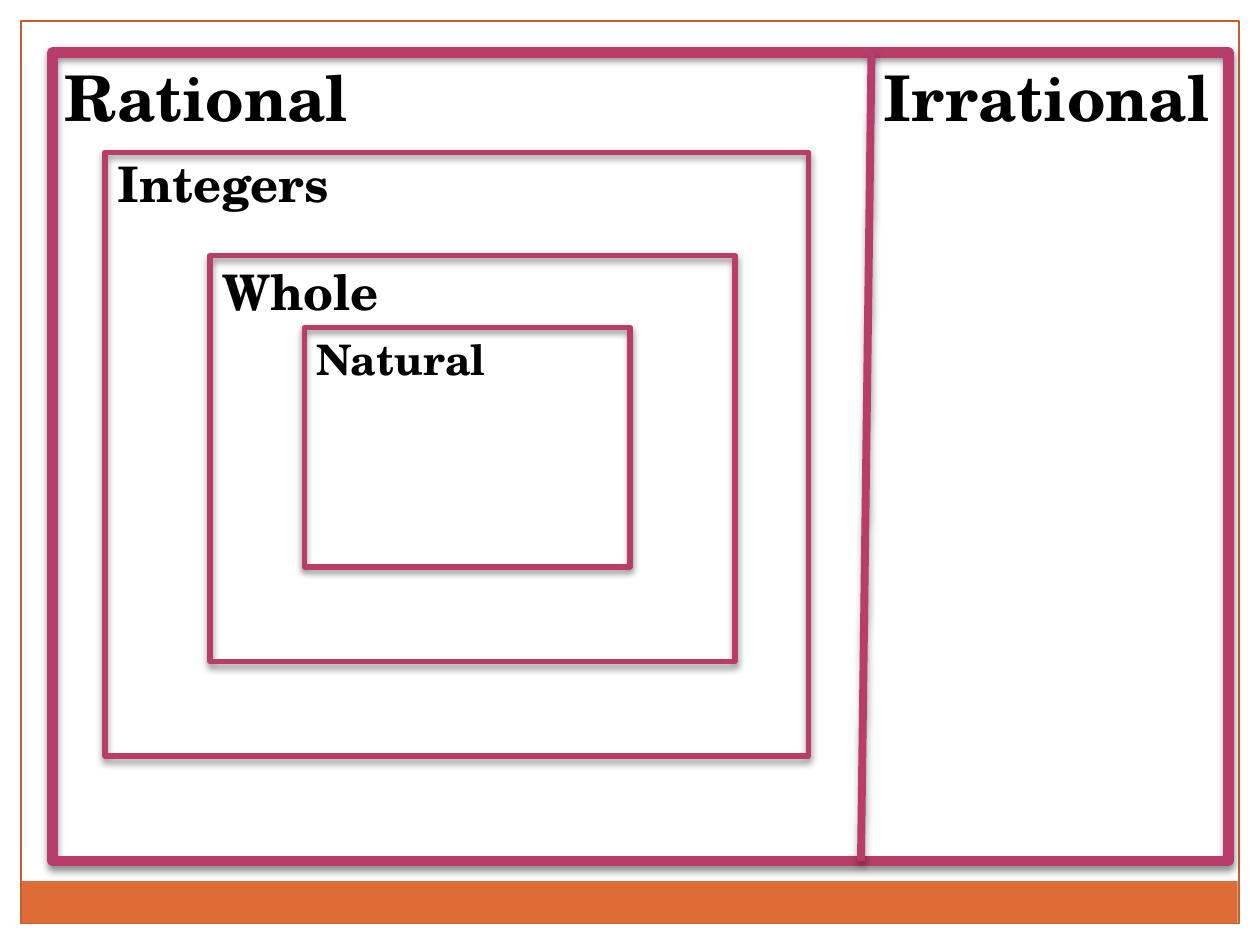
from lxml import etree
from pptx import Presentation
from pptx.dml.color import RGBColor
from pptx.enum.shapes import MSO_CONNECTOR, MSO_SHAPE
from pptx.enum.text import MSO_AUTO_SIZE
from pptx.oxml.ns import qn
from pptx.util import Pt

RECT = MSO_SHAPE.RECTANGLE
STRAIGHT = MSO_CONNECTOR.STRAIGHT
GROW = MSO_AUTO_SIZE.SHAPE_TO_FIT_TEXT

FONT = "TeX Gyre Schola"
COLORS = {"band": "DE6C36", "border": "C45F30", "set": "B83D68",
          "text": "000000", "shadow": "000000"}


def style_line(sp, color, width):
    sp.line.color.rgb = RGBColor.from_string(COLORS[color])
    sp.line.width = Pt(width)


def add_shadow(sp, opacity):
    """Give sp a soft shadow straight below it, opacity in percent."""
    effects = sp._element.spPr.find(qn("a:effectLst"))
    if effects is None:
        effects = etree.SubElement(sp._element.spPr, qn("a:effectLst"))
    shadow = etree.SubElement(effects, qn("a:outerShdw"), blurRad=str(Pt(4)),
                              dist=str(Pt(2)), dir="5400000", rotWithShape="0")
    color = etree.SubElement(shadow, qn("a:srgbClr"), val=COLORS["shadow"])
    etree.SubElement(color, qn("a:alpha"), val=str(opacity * 1000))


prs = Presentation()
prs.slide_width, prs.slide_height = Pt(720), Pt(540)
s = prs.slides.add_slide(prs.slide_layouts[6])

# Page border with the band at its foot
band = s.shapes.add_shape(RECT, Pt(11.8), Pt(503.5), Pt(695.5), Pt(24.4))
band.shadow.inherit = False
band.fill.solid()
band.fill.fore_color.rgb = RGBColor.from_string(COLORS["band"])
band.line.fill.background()

border = s.shapes.add_shape(RECT, Pt(12), Pt(12), Pt(696), Pt(515.8))
border.shadow.inherit = False
border.fill.background()
style_line(border, "border", 0.75)

# Nested number sets: left, top, width, height, line width
boxes = [
    (30, 30, 672, 462, 6),
    (60, 87, 402, 345, 3),
    (120, 146, 300, 232, 3),
    (174, 187.2, 186, 136.8, 3),
]
for left, top, width, height, weight in boxes:
    sp = s.shapes.add_shape(RECT, Pt(left), Pt(top), Pt(width), Pt(height))
    sp.shadow.inherit = False
    sp.fill.background()
    style_line(sp, "set", weight)
    add_shadow(sp, 45)

divider = s.shapes.add_connector(STRAIGHT, Pt(498), Pt(30), Pt(492), Pt(492))
style_line(divider, "set", 4.5)
add_shadow(divider, 35)

# Set names: text, left, top, width, height, font size
labels = [
    ("Irrational", 498, 30, 204, 51, 36),
    ("Rational", 30, 30, 204, 51, 36),
    ("Integers", 60, 84, 174, 41, 28),
    ("Whole", 120, 146, 114, 41, 28),
    ("Natural", 174, 187.2, 114, 36, 24),
]
for text, left, top, width, height, size in labels:
    tb = s.shapes.add_textbox(Pt(left), Pt(top), Pt(width), Pt(height))
    tf = tb.text_frame
    tf.word_wrap = True
    tf.auto_size = GROW
    r = tf.paragraphs[0].add_run()
    r.text = text
    r.font.name = FONT
    r.font.size = Pt(size)
    r.font.bold = True
    r.font.color.rgb = RGBColor.from_string(COLORS["text"])

prs.save("out.pptx")
